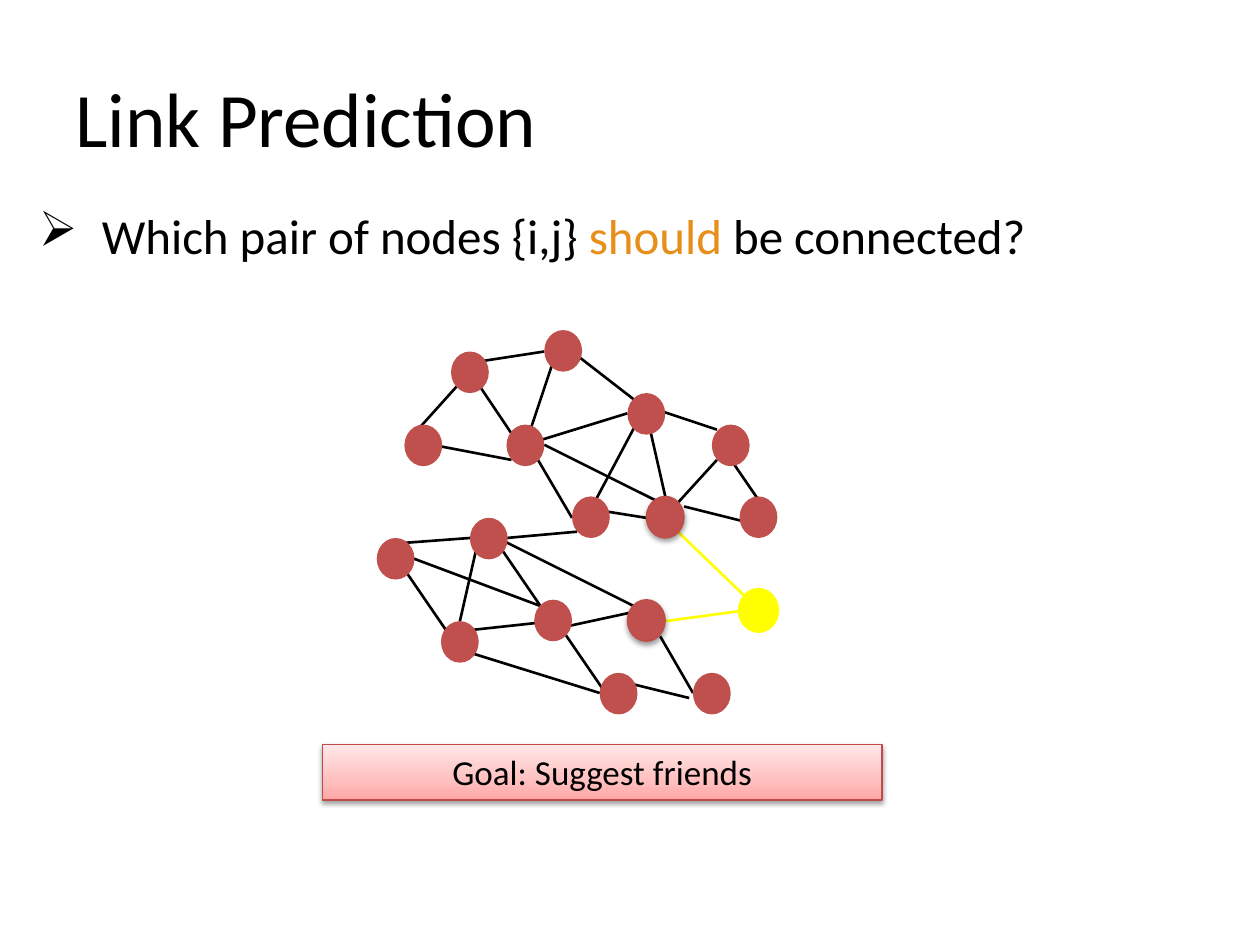
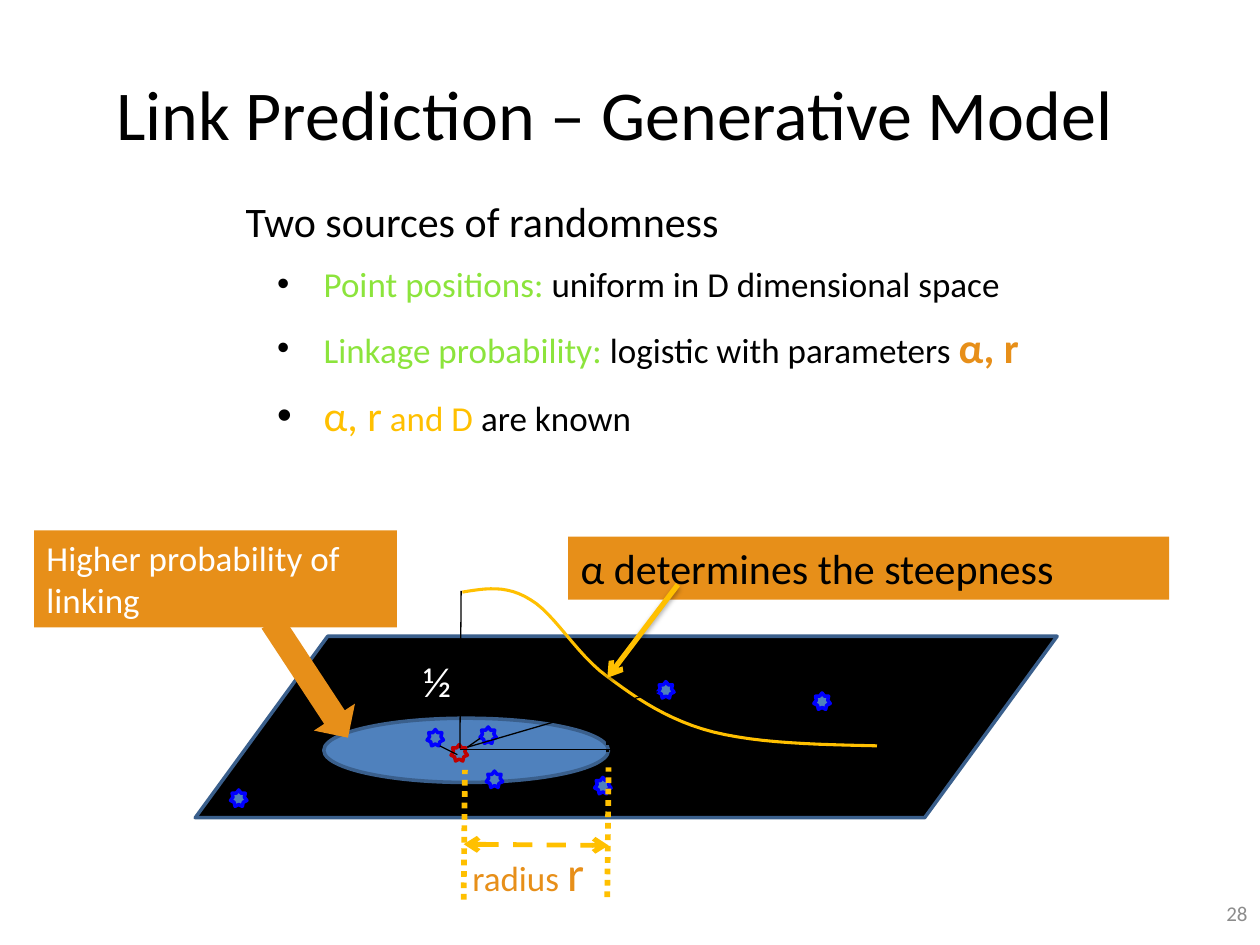
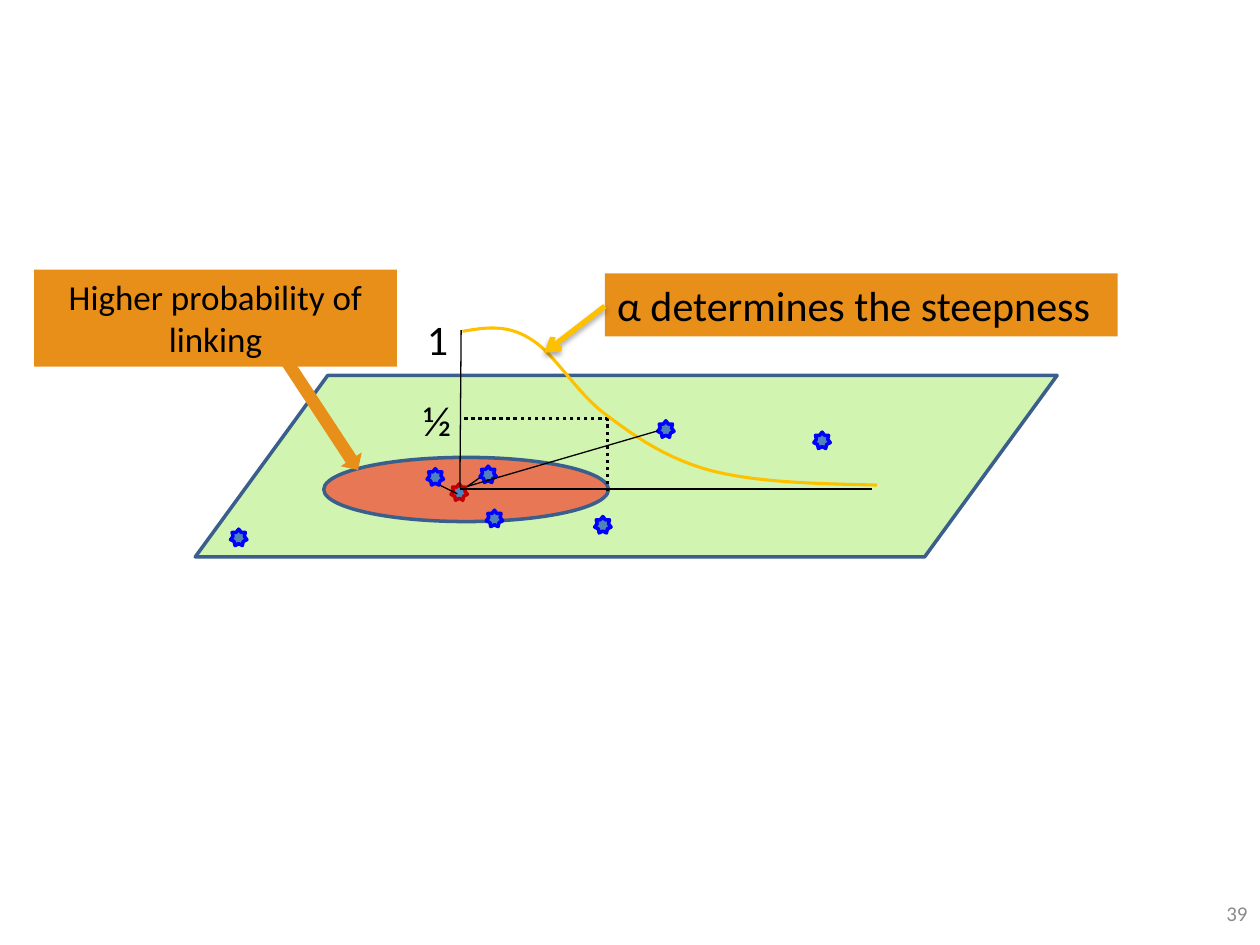
from dataclasses import dataclass

from lxml.etree import SubElement
from pptx import Presentation
from pptx.dml.color import RGBColor
from pptx.enum.dml import MSO_LINE
from pptx.enum.shapes import MSO_CONNECTOR, MSO_SHAPE
from pptx.enum.text import MSO_ANCHOR, PP_ALIGN
from pptx.oxml.ns import qn
from pptx.util import Inches, Pt


@dataclass(frozen=True)
class Theme:
    font: str = "Calibri"
    # Colours
    black: str = "000000"
    white: str = "FFFFFF"
    gray: str = "8C8C8C"
    orange: str = "E78F19"
    gold: str = "FFC000"
    green: str = "8CE43C"
    blue: str = "4F81BD"
    navy: str = "3A5F8C"
    pure_blue: str = "0000FF"
    red: str = "FF0000"
    dark_red: str = "C00000"
    node: str = "C0504D"
    node_edge: str = "BF4C48"
    yellow: str = "FFFF00"
    goal_stops: tuple = ((0, "FFA6A5"), (35, "FFC0BF"), (100, "FFE7E7"))
    # Type sizes
    title: int = 44
    long_title: int = 40
    question: int = 28
    lead: int = 24
    body: int = 20
    number: int = 12


THEME = Theme()


def rgb(color):
    return RGBColor.from_string(color)


def write(frame, text, size=THEME.body, color=THEME.black, align=PP_ALIGN.LEFT,
          before=0, bullet=None, hang=None, bullet_font=None):
    """Add a paragraph; text is a string or a list of (text, run format) pairs."""
    para = frame.paragraphs[0]
    if para.runs:
        para = frame.add_paragraph()
    para.alignment = align
    para.space_before = Pt(before)
    for words, run_format in [(text, {})] if isinstance(text, str) else text:
        run = para.add_run()
        run.text = words
        run.font.name = THEME.font
        run.font.size = Pt(run_format.get("size", size))
        run.font.bold = run_format.get("bold", False)
        run.font.color.rgb = rgb(run_format.get("color", color))
    if bullet:
        left, indent = hang
        props = para._p.get_or_add_pPr()
        props.set("marL", str(Inches(left)))
        props.set("indent", str(Inches(indent)))
        SubElement(SubElement(props, qn("a:buClr")), qn("a:srgbClr"), val=color)
        SubElement(props, qn("a:buSzPts"), val=str(size * 100))
        if bullet_font:
            SubElement(props, qn("a:buFont"), typeface=bullet_font)
        SubElement(props, qn("a:buChar"), char=bullet)


def add_shadow(effects, alpha, distance):
    outer = SubElement(effects, qn("a:outerShdw"), blurRad=str(Pt(3.1)),
                       dist=str(Pt(distance)), dir="5400000", rotWithShape="0")
    shade = SubElement(outer, qn("a:srgbClr"), val=THEME.black)
    SubElement(shade, qn("a:alpha"), val=str(alpha * 1000))


class Deck:
    def __init__(self, theme):
        self.theme = theme
        self.prs = Presentation()
        self.prs.slide_width, self.prs.slide_height = Inches(10), Inches(7.5)
        self.shapes = None

    def new_slide(self, number=None):
        self.shapes = self.prs.slides.add_slide(self.prs.slide_layouts[6]).shapes
        if number:
            self.text(str(number), (9.33, 7, 0.67, 0.5), size=self.theme.number,
                      color=self.theme.gray, align=PP_ALIGN.RIGHT, middle=True)

    def text(self, text, at, middle=False, **fmt):
        frame = self.shapes.add_textbox(*map(Inches, at)).text_frame
        frame.word_wrap = True
        frame.vertical_anchor = MSO_ANCHOR.MIDDLE if middle else MSO_ANCHOR.TOP
        write(frame, text, **fmt)
        return frame

    def stroke(self, line, color, width):
        line.color.rgb = rgb(color)
        line.width = Pt(width)

    def shape(self, kind, at, fill, line=None, alpha=None, shadow=False):
        shape = self.shapes.add_shape(kind, *map(Inches, at))
        shape.shadow.inherit = False
        shape.fill.solid()
        shape.fill.fore_color.rgb = rgb(fill)
        props = shape.element.spPr
        if alpha:
            tint = props.find(qn("a:solidFill")).find(qn("a:srgbClr"))
            SubElement(tint, qn("a:alpha"), val=str(alpha * 1000))
        if line:
            self.stroke(shape.line, *line)
        else:
            shape.line.fill.background()
        if shadow:
            add_shadow(props.find(qn("a:effectLst")), 38, 1.6)
        return shape

    def label(self, text, at, fill=THEME.orange, line=None, shadow=False, **fmt):
        box = self.shape(MSO_SHAPE.RECTANGLE, at, fill, line, shadow=shadow)
        box.text_frame.word_wrap = True
        box.text_frame.vertical_anchor = MSO_ANCHOR.TOP
        write(box.text_frame, text, **fmt)
        return box

    def gradient(self, shape, stops):
        shape.fill.gradient()
        shape.fill.gradient_angle = 90
        stop_list = shape.element.spPr.find(qn("a:gradFill")).find(qn("a:gsLst"))
        stop_list.clear()
        for position, color in stops:
            stop = SubElement(stop_list, qn("a:gs"), pos=str(position * 1000))
            SubElement(stop, qn("a:srgbClr"), val=color)

    def line(self, ends, color=THEME.black, width=0.75, dash=None, arrows=(), shadow=False):
        link = self.shapes.add_connector(MSO_CONNECTOR.STRAIGHT, *map(Inches, ends))
        self.stroke(link.line, color, width)
        if dash:
            link.line.dash_style = dash
        props = link.element.spPr
        for end in arrows:
            SubElement(props.find(qn("a:ln")), qn(f"a:{end}"), type="arrow")
        effects = SubElement(props, qn("a:effectLst"))
        if shadow:
            add_shadow(effects, 35, 1.8)

    def curve(self, start, segments, color, width, steps=12):
        """Draw an open chain of cubic Bezier segments as a fine polyline."""
        points, origin = [], start
        for *controls, end in segments:
            knots = (origin, *controls, end)
            for step in range(1, steps + 1):
                t = step / steps
                weights = ((1 - t) ** 3, 3 * t * (1 - t) ** 2, 3 * t * t * (1 - t), t ** 3)
                points.append(tuple(Inches(sum(w * k[axis] for w, k in zip(weights, knots)))
                                    for axis in (0, 1)))
            origin = end
        builder = self.shapes.build_freeform(*map(Inches, start))
        builder.add_line_segments(points, close=False)
        outline = builder.convert_to_shape()
        outline.shadow.inherit = False
        outline.fill.background()
        self.stroke(outline.line, color, width)


# Social graph
EDGES = (
    (5.69, 3.65, 5.38, 3.99), (5.43, 4.02, 5.91, 4.14), (5.24, 5.05, 5.5, 5.5),
    (4.32, 5.01, 5.06, 4.85), (4.98, 5.42, 5.47, 5.54), (5.13, 4.11, 4.69, 4.04),
    (5.03, 3.4, 4.69, 4.04), (4.54, 4.11, 4.27, 3.65), (4.58, 4.22, 4.02, 4.27),
    (3.92, 4.27, 4.29, 4.81), (3.65, 5.01, 4.39, 4.93), (4.47, 5.01, 4.84, 5.55),
    (3.21, 4.52, 3.58, 5.06), (3.8, 4.27, 3.65, 4.93), (5.72, 3.53, 6.09, 4.07),
    (5.06, 3.2, 5.69, 3.41), (5.13, 3.28, 5.28, 3.94), (4.54, 2.79, 5.03, 3.17),
    (4.17, 3.53, 4.98, 3.28), (4.39, 2.87, 4.17, 3.53), (3.73, 2.95, 4.1, 3.5),
    (3.28, 3.45, 3.73, 2.95), (3.8, 2.87, 4.32, 2.79), (3.73, 5.18, 4.76, 5.5),
    (3.43, 3.53, 4.06, 3.65), (3.73, 4.27, 3.06, 4.32), (3.95, 4.27, 5.03, 4.81),
    (4.32, 3.53, 5.4, 4.07), (3.06, 4.35, 4.29, 4.81),
)
SUGGESTED_EDGES = ((5.28, 4.93, 5.87, 4.85), (5.38, 4.22, 5.91, 4.73))
NODES = (
    (3.21, 3.37), (3.58, 2.79), (4.54, 3.94), (4.02, 3.37), (4.32, 2.62),
    (4.98, 3.12), (5.87, 3.94), (5.65, 3.37), (3.73, 4.11), (3.5, 4.93),
    (4.24, 4.76), (4.76, 5.34), (5.5, 5.34), (2.99, 4.27),
)
CANDIDATES = ((5.13, 3.94), (4.98, 4.76))
NODE_SIZE = (0.3, 0.33)

# Linking model, with heights measured from the top of the plane
NEAR_POINTS = ((3.81, 0.72), (3.39, 0.74), (3.86, 1.07))
FAR_POINTS = ((4.72, 1.12), (5.22, 0.36), (6.46, 0.45), (1.83, 1.22))
CENTER_POINT = (3.58, 0.86)
HALF_GUIDES = ((4.82, 0.92, 4.82, 0.33), (4.83, 0.34, 3.67, 0.34))
AXES = ((3.65, 0.9, 6.92, 0.9), (3.65, 0.89, 3.66, -0.36))
DISTANCES = ((3.71, 0.88, 3.81, 0.81), (3.49, 0.87, 3.63, 0.94), (3.71, 0.88, 5.22, 0.44))
LOGISTIC_START = (3.67, -0.35)
LOGISTIC = (
    ((3.85, -0.38), (4.02, -0.41), (4.21, -0.29)),
    ((4.4, -0.18), (4.58, 0.15), (4.82, 0.32)),
    ((5.06, 0.5), (5.31, 0.67), (5.66, 0.76)),
    ((6.02, 0.85), (6.49, 0.86), (6.96, 0.87)),
)


def linking_model(deck, top, plane, disc, ink, pointer, label_format):
    """Draw the plane of points; plane and disc are fill settings."""
    theme = deck.theme

    def shift(ends):
        x1, y1, x2, y2 = ends
        return x1, top + y1, x2, top + y2

    def star(point, color):
        x, y = point
        deck.shape(MSO_SHAPE.STAR_7_POINT, (x, top + y, 0.13, 0.13), theme.blue, (color, 2))

    # Plane and neighbourhood
    ground = deck.shape(MSO_SHAPE.PARALLELOGRAM, (1.55, top, 6.84, 1.44),
                        line=(theme.navy, 2), **plane)
    ground.adjustments[0] = 0.73
    deck.shape(MSO_SHAPE.OVAL, (2.57, top + 0.65, 2.26, 0.51), line=(theme.navy, 2), **disc)
    deck.text("½", (3.26, top + 0.1, 0.34, 0.5), size=theme.lead, color=ink)
    for guide in HALF_GUIDES:
        deck.line(shift(guide), width=2, dash=MSO_LINE.ROUND_DOT)
    star(CENTER_POINT, theme.dark_red)
    for point in NEAR_POINTS:
        star(point, theme.pure_blue)

    # Logistic curve
    for axis in AXES:
        deck.line(shift(axis))
    deck.curve((LOGISTIC_START[0], top + LOGISTIC_START[1]),
               [[(x, top + y) for x, y in segment] for segment in LOGISTIC], theme.gold, 1.75)

    # Pointer and label
    x, y, thickness = pointer
    arrow = deck.shape(MSO_SHAPE.RIGHT_ARROW, (x, top + y, 1.1, thickness), theme.orange)
    arrow.rotation = 56.7
    deck.label("Higher probability of linking", (0.27, top - 0.84, 2.88, 0.77), **label_format)
    for point in FAR_POINTS:
        star(point, theme.pure_blue)
    for distance in DISTANCES:
        deck.line(shift(distance))


def steepness(deck, box, arrow):
    deck.label("α determines the steepness", box, size=deck.theme.lead)
    deck.line(arrow, deck.theme.gold, 3, arrows=["tailEnd"], shadow=True)


def link_prediction(deck):
    theme = deck.theme
    deck.new_slide()
    deck.text("Link Prediction", (0.5, 0.3, 9, 1.25), size=theme.title, middle=True)
    deck.text([("Which pair of nodes {i,j} ", {}), ("should ", {"color": theme.orange}),
               ("be connected?", {})],
              (0.21, 1.58, 9.79, 0.57), size=theme.question, bullet="➢", hang=(0.5, -0.5))

    # Edges below nodes
    for edge in EDGES:
        deck.line(edge, width=1.5)
    deck.shape(MSO_SHAPE.OVAL, (5.87, 4.68, *NODE_SIZE), theme.yellow, (theme.yellow, 2))
    for edge in SUGGESTED_EDGES:
        deck.line(edge, theme.yellow, 1.5)
    for node in NODES:
        deck.shape(MSO_SHAPE.OVAL, (*node, *NODE_SIZE), theme.node)
    for node in CANDIDATES:
        deck.shape(MSO_SHAPE.OVAL, (*node, *NODE_SIZE), theme.node,
                   (theme.node_edge, 0.75), shadow=True)

    goal = deck.label("Goal: Suggest friends", (2.56, 5.91, 4.44, 0.44),
                      line=(theme.node_edge, 0.75), shadow=True, align=PP_ALIGN.CENTER)
    deck.gradient(goal, theme.goal_stops)


def generative_model(deck):
    theme = deck.theme
    deck.new_slide(28)
    deck.text("Link Prediction – Generative Model", (0.25, 0.42, 9.25, 0.94),
              size=theme.long_title, align=PP_ALIGN.CENTER, middle=True)
    linking_model(deck, 5.05, {"fill": theme.black}, {"fill": theme.blue}, theme.white,
                  (1.91, 0.15, 0.39), {"color": theme.white})

    # Sources of randomness
    sources = deck.text("Two sources of randomness", (1.85, 1.5, 7.68, 2.05), size=theme.lead)
    green, gold = {"color": theme.green}, {"color": theme.gold}
    for item in (
        [("Point positions: ", green), ("uniform in D dimensional space", {})],
        [("Linkage probability: ", green), ("logistic with parameters ", {}),
         ("α, r", {"size": theme.lead, "color": theme.orange, "bold": True})],
        [("α, r", {"size": theme.lead, **gold}), (" and D ", gold), ("are known", {})],
    ):
        write(sources, item, before=9.8, bullet="•", hang=(0.62, -0.37), bullet_font="Arial")

    # Radius
    deck.line((3.68, 6.7, 4.83, 6.71), theme.gold, 2.75, MSO_LINE.DASH, ["headEnd", "tailEnd"])
    for limit in ((4.82, 7.12, 4.83, 6.09), (3.68, 7.14, 3.69, 6.11)):
        deck.line(limit, theme.gold, 3.25, MSO_LINE.ROUND_DOT)
    deck.text([("radius ", {}), ("r", {"size": theme.question})], (3.65, 6.64, 1.49, 0.57),
              color=theme.orange)
    steepness(deck, (4.51, 4.26, 4.77, 0.5), (5.38, 4.64, 4.82, 5.38))


def model_alone(deck):
    theme = deck.theme
    deck.new_slide(39)
    linking_model(deck, 2.98, {"fill": theme.green, "alpha": 40},
                  {"fill": theme.red, "alpha": 51}, theme.black,
                  (1.99, 0.19, 0.2), {"align": PP_ALIGN.CENTER})
    deck.text("1", (3.29, 2.44, 0.34, 0.5), size=theme.lead)
    steepness(deck, (4.8, 2.17, 4.07, 0.5), (4.8, 2.43, 4.32, 2.8))


def main():
    deck = Deck(THEME)
    link_prediction(deck)
    generative_model(deck)
    model_alone(deck)
    deck.prs.save("out.pptx")


if __name__ == "__main__":
    main()
